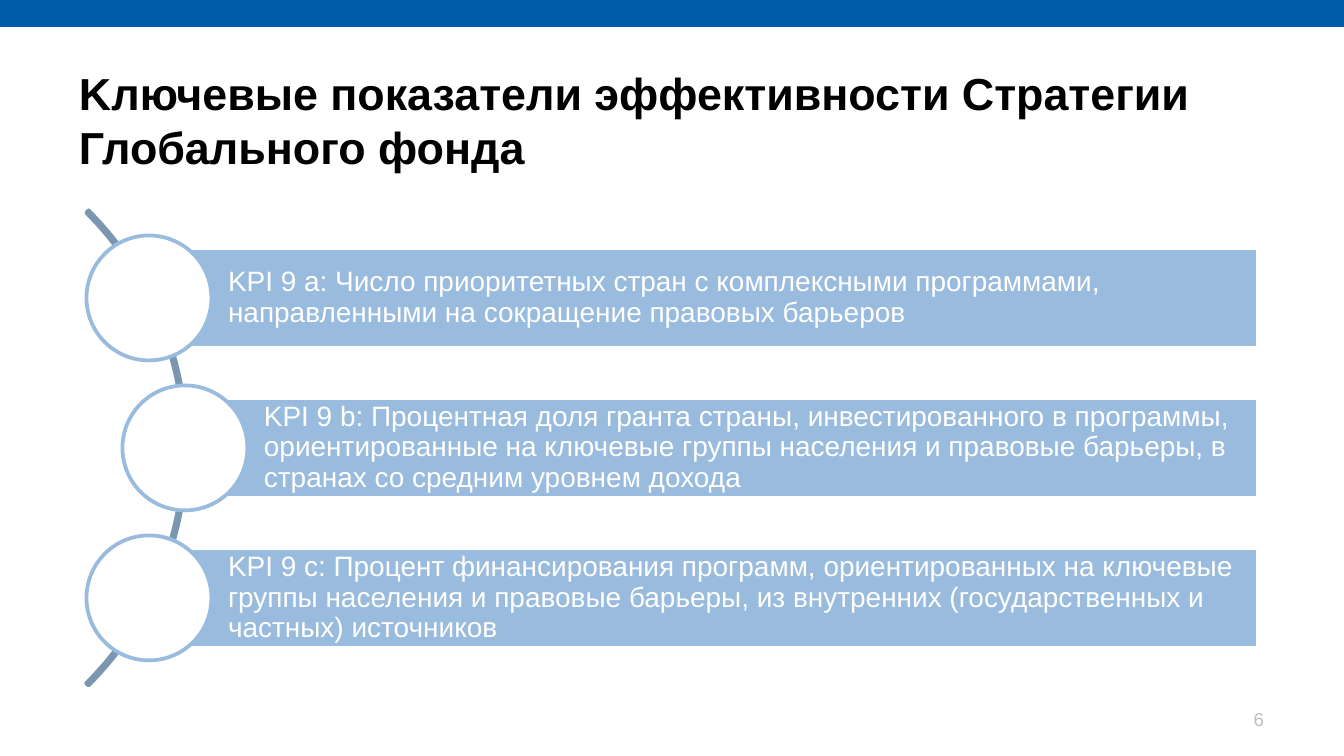
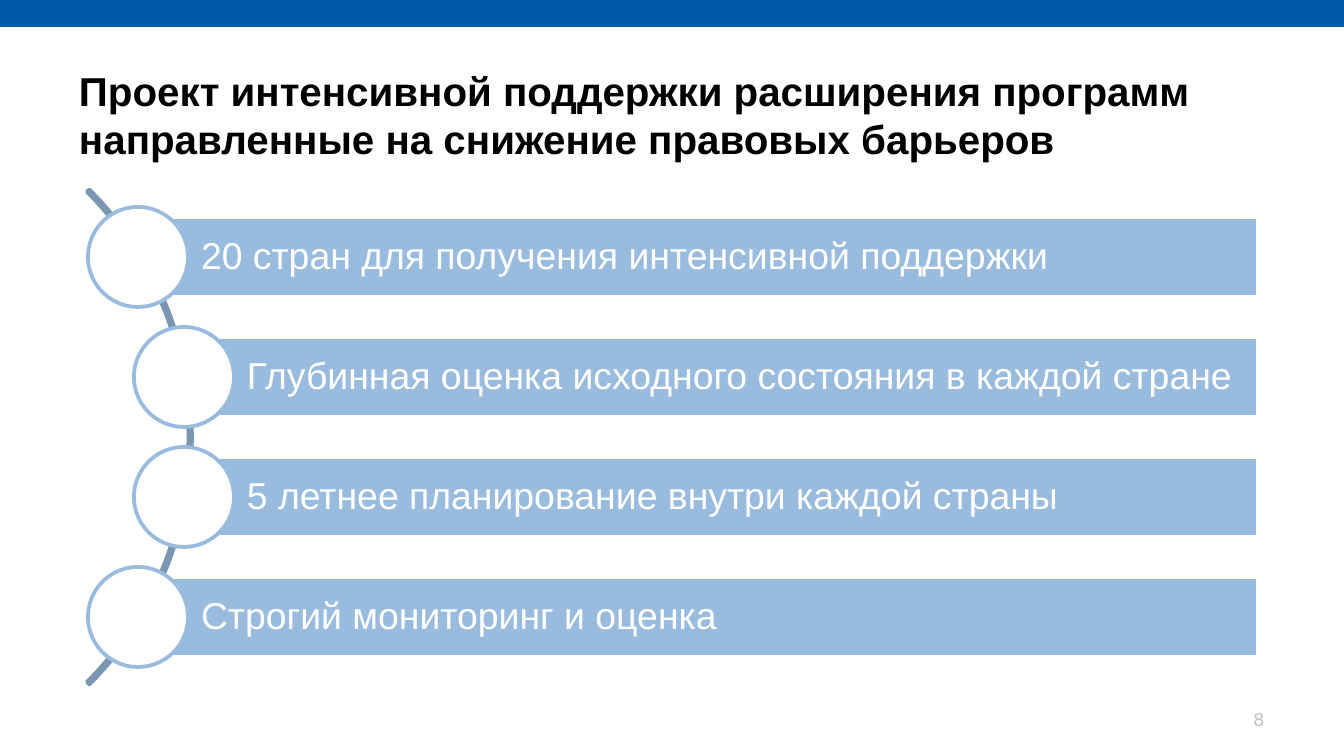
from pptx import Presentation
from pptx.dml.color import RGBColor
from pptx.enum.shapes import MSO_SHAPE
from pptx.enum.text import MSO_ANCHOR, PP_ALIGN
from pptx.util import Pt

PX = 914400 / 134.4
WIDTH, HEIGHT = 1344, 756
BAR_RIGHT = 1258

WHITE = RGBColor(0xFF, 0xFF, 0xFF)
BLACK = RGBColor(0x00, 0x00, 0x00)
BAND_BLUE = RGBColor(0x00, 0x5A, 0xAA)
BAR_BLUE = RGBColor(0x99, 0xBB, 0xDD)
ARC_BLUE = RGBColor(0x7B, 0x96, 0xB1)
NUMBER_GREY = RGBColor(0xBF, 0xBF, 0xBF)

# Each item is the x of its circle's centre, then its text.
SLIDES = [
    {
        "title": "Kлючевые показатели эффективности Стратегии Глобального фонда",
        "title_size": 24, "title_box": (79, 66, 1185, 126), "number": "6",
        "items": [
            (149, "KPI 9 a: Число приоритетных стран с комплексными программами, "
                  "направленными на сокращение правовых барьеров"),
            (185, "KPI 9 b: Процентная доля гранта страны, инвестированного в программы, "
                  "ориентированные на ключевые группы населения и правовыe барьеры, "
                  "в странах со средним уровнем дохода"),
            (149, "KPI 9 c: Процент финансирования программ, ориентированных на ключевые "
                  "группы населения и правовыe барьеры, из внутренних "
                  "(государственных и частных) источников"),
        ],
        "text_size": 15, "first_y": 298, "pitch": 150, "bar_height": 100,
        "circle": 125, "insets": (79, 5, 5, 5), "arc_left": -485, "arc": 672,
    },
    {
        "title": "Проект интенсивной поддержки расширения программ "
                 "направленные на снижение правовых барьеров",
        "title_size": 21.6, "title_box": (79, 66, 1223, 111), "number": "8",
        "items": [
            (138, "20 стран для получения интенсивной поддержки"),
            (184, "Глубинная оценка исходного состояния в каждой стране"),
            (184, "5 летнее планирование внутри каждой страны"),
            (138, "Строгий мониторинг и оценка"),
        ],
        "text_size": 20, "first_y": 257, "pitch": 120, "bar_height": 80,
        "circle": 100, "insets": (63, 8, 8, 8), "arc_left": -508, "arc": 700,
    },
]


def px(*lengths):
    return [round(length * PX) for length in lengths]


def add_shape(slide, kind, box, fill=None, line=None):
    shape = slide.shapes.add_shape(kind, *px(*box))
    shape.shadow.inherit = False
    if fill is None:
        shape.fill.background()
    else:
        shape.fill.solid()
        shape.fill.fore_color.rgb = fill
    if line is None:
        shape.line.fill.background()
    else:
        shape.line.color.rgb = line
        shape.line.width = Pt(2)
    return shape


def write(shape, text, size, color, insets, anchor=MSO_ANCHOR.MIDDLE, bold=False, **paragraph_format):
    """Fill a shape with one paragraph; insets are left, top, right, bottom in px."""
    frame = shape.text_frame
    frame.word_wrap = True
    frame.vertical_anchor = anchor
    for side, inset in zip(("left", "top", "right", "bottom"), px(*insets)):
        setattr(frame, f"margin_{side}", inset)
    paragraph = frame.paragraphs[0]
    for name, value in {"alignment": PP_ALIGN.LEFT, **paragraph_format}.items():
        setattr(paragraph, name, value)
    run = paragraph.add_run()
    run.text = text
    for name, value in {"name": "Arial", "size": Pt(size), "bold": bold}.items():
        setattr(run.font, name, value)
    run.font.color.rgb = color


def add_frame(slide, content):
    """Add what every slide shares: top band, title and slide number."""
    add_shape(slide, MSO_SHAPE.RECTANGLE, (0, 0, WIDTH, 27), BAND_BLUE)
    title = slide.shapes.add_textbox(*px(*content["title_box"]))
    write(title, content["title"], content["title_size"], BLACK, (0, 0, 0, 7),
          MSO_ANCHOR.TOP, bold=True)
    number = slide.shapes.add_textbox(*px(964, 699, 313, 40))
    write(number, content["number"], 10, NUMBER_GREY, (13, 7, 13, 7),
          alignment=PP_ALIGN.RIGHT)


def add_curved_list(slide, content):
    """Add bars led by circles that follow an arc."""
    items, first_y, pitch = content["items"], content["first_y"], content["pitch"]
    arc_size, height, diameter = content["arc"], content["bar_height"], content["circle"]
    middle_y = first_y + pitch * (len(items) - 1) / 2
    arc = add_shape(slide, MSO_SHAPE.BLOCK_ARC,
                    (content["arc_left"], middle_y - arc_size / 2, arc_size, arc_size),
                    line=ARC_BLUE)
    for index, value in enumerate((189, 27, 0.005)):
        arc.adjustments[index] = value

    for index, (x, text) in enumerate(items):
        y = first_y + index * pitch
        bar = add_shape(slide, MSO_SHAPE.RECTANGLE,
                        (x, y - height / 2, BAR_RIGHT - x, height), BAR_BLUE, WHITE)
        write(bar, text, content["text_size"], WHITE, content["insets"], line_spacing=0.9)
        add_shape(slide, MSO_SHAPE.OVAL,
                  (x - diameter / 2, y - diameter / 2, diameter, diameter), WHITE, BAR_BLUE)


def main():
    presentation = Presentation()
    presentation.slide_width, presentation.slide_height = px(WIDTH, HEIGHT)
    for content in SLIDES:
        slide = presentation.slides.add_slide(presentation.slide_layouts[6])
        add_frame(slide, content)
        add_curved_list(slide, content)
    presentation.save("out.pptx")


if __name__ == "__main__":
    main()
